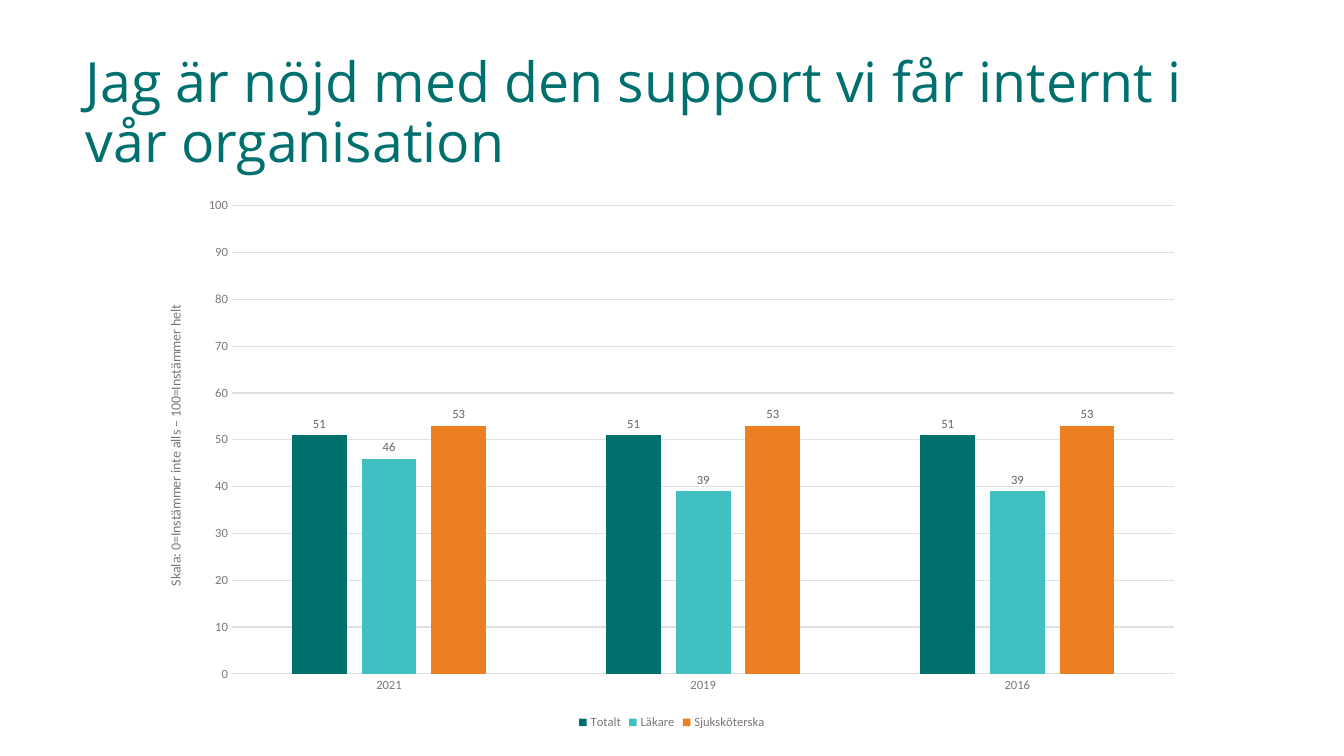
from lxml import etree
from pptx import Presentation
from pptx import util as u
from pptx.chart.data import CategoryChartData
from pptx.dml.color import RGBColor
from pptx.enum import chart as kinds, text
from pptx.oxml import parse_xml
from pptx.oxml.ns import nsdecls, qn

TEAL_TITLE = RGBColor(0x00, 0x70, 0x6E)
TEAL = RGBColor(0x00, 0x70, 0x6D)
TURQUOISE = RGBColor(0x41, 0xC0, 0xC1)
ORANGE = RGBColor(0xEC, 0x7F, 0x21)
DARK = RGBColor(0x33, 0x30, 0x2F)
GREY = RGBColor(0x7E, 0x77, 0x74)
LABEL_GREY = RGBColor(0x69, 0x62, 0x60)
GRID = RGBColor(0xE1, 0xDF, 0xDF)


def style_font(font, size, color, name="Calibri"):
    for key, value in {"size": u.Pt(size), "name": name, "bold": False}.items():
        setattr(font, key, value)
    font.color.rgb = color


deck = Presentation()
deck.slide_width, deck.slide_height = u.Pt(960), u.Pt(540)
page = deck.slides.add_slide(deck.slide_layouts[5])

# Title
title = page.shapes.title
title_box = {"left": 54, "top": 48.24, "width": 840.24, "height": 66.96}
for key, value in title_box.items():
    setattr(title, key, u.Pt(value))
frame = title.text_frame
frame_format = {
    "word_wrap": True,
    "auto_size": text.MSO_AUTO_SIZE.NONE,
    "vertical_anchor": text.MSO_ANCHOR.MIDDLE,
}
for key, value in frame_format.items():
    setattr(frame, key, value)
para = frame.paragraphs[0]
para.alignment = text.PP_ALIGN.LEFT
para.line_spacing = 0.9
span = para.add_run()
span.text = "Jag är nöjd med den support vi får internt i vår organisation"
style_font(span.font, 39.6, TEAL_TITLE, "Open Sans")

# Chart data
groups = [
    ("Totalt", (51, 51, 51), TEAL),
    ("Läkare", (46, 39, 39), TURQUOISE),
    ("Sjuksköterska", (53, 53, 53), ORANGE),
]
data = CategoryChartData(number_format="0")
data.categories = ["2021", "2019", "2016"]
for name, values, color in groups:
    data.add_series(name, values)
chart = page.shapes.add_chart(
    kinds.XL_CHART_TYPE.COLUMN_CLUSTERED,
    u.Pt(105.84), u.Pt(135.36), u.Pt(748.08), u.Pt(388.8), data,
).chart
chart.has_title = False
style_font(chart.font, 10, DARK)

# Columns and their labels
plot = chart.plots[0]
for key, value in {"gap_width": 219, "overlap": -27, "vary_by_categories": False}.items():
    setattr(plot, key, value)
for series, (name, values, color) in zip(plot.series, groups):
    series.format.fill.solid()
    series.format.fill.fore_color.rgb = color
    labels = series.data_labels
    label_format = {
        "show_value": True,
        "number_format": "0",
        "number_format_is_linked": False,
        "position": kinds.XL_LABEL_POSITION.OUTSIDE_END,
    }
    for key, value in label_format.items():
        setattr(labels, key, value)
    style_font(labels.font, 9, LABEL_GREY)

# Axes
years, scale = chart.category_axis, chart.value_axis
for axis in (years, scale):
    axis.major_tick_mark = axis.minor_tick_mark = kinds.XL_TICK_MARK.NONE
    style_font(axis.tick_labels.font, 9, GREY)
scale_format = {
    "minimum_scale": 0,
    "maximum_scale": 100,
    "major_unit": 10,
    "has_major_gridlines": True,
}
for key, value in scale_format.items():
    setattr(scale, key, value)
scale.tick_labels.number_format = "0"
scale.tick_labels.number_format_is_linked = False
scale.format.line.fill.background()
for line in (years.format.line, scale.major_gridlines.format.line):
    line.color.rgb = GRID
    line.width = u.Pt(0.75)
caption = scale.axis_title.text_frame
caption.text = "Skala: 0=Instämmer inte alls – 100=Instämmer helt"
style_font(caption.paragraphs[0].runs[0].font, 10, GREY)

# Legend
chart.has_legend = True
chart.legend.position = kinds.XL_LEGEND_POSITION.BOTTOM
chart.legend.include_in_layout = False
style_font(chart.legend.font, 9, GREY)

# Plot area as shares of the chart frame
layout = parse_xml(
    f'<c:layout {nsdecls("c")}><c:manualLayout><c:layoutTarget val="inner"/>'
    '<c:xMode val="edge"/><c:yMode val="edge"/></c:manualLayout></c:layout>'
)
for key, share in {"x": 0.08, "y": 0.03, "w": 0.9, "h": 0.86}.items():
    etree.SubElement(layout[0], qn(f"c:{key}")).set("val", str(share))
plot_area = chart.element.find(".//" + qn("c:plotArea"))
for old in plot_area.findall(qn("c:layout")):
    plot_area.remove(old)
plot_area.insert(0, layout)

deck.save("out.pptx")
